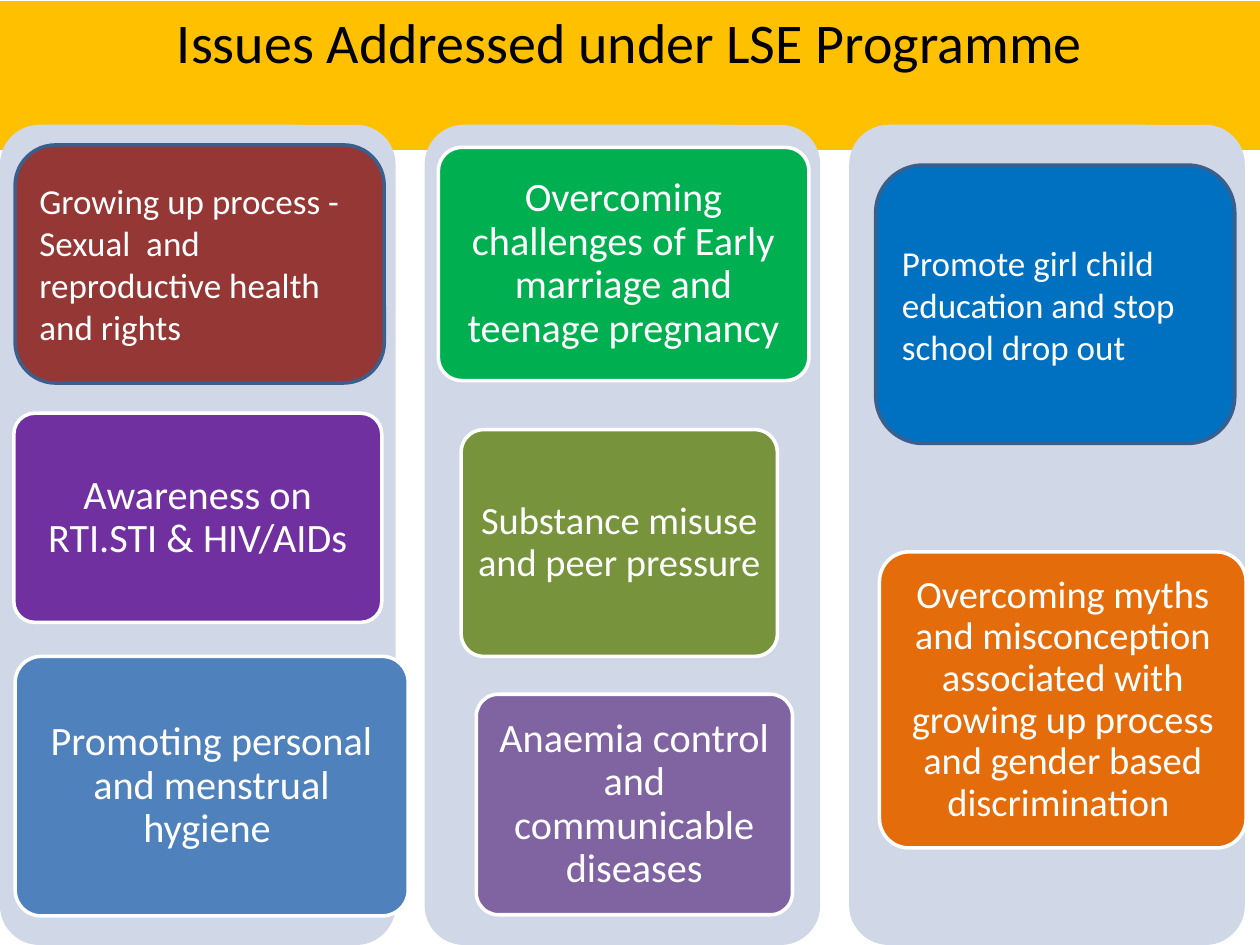
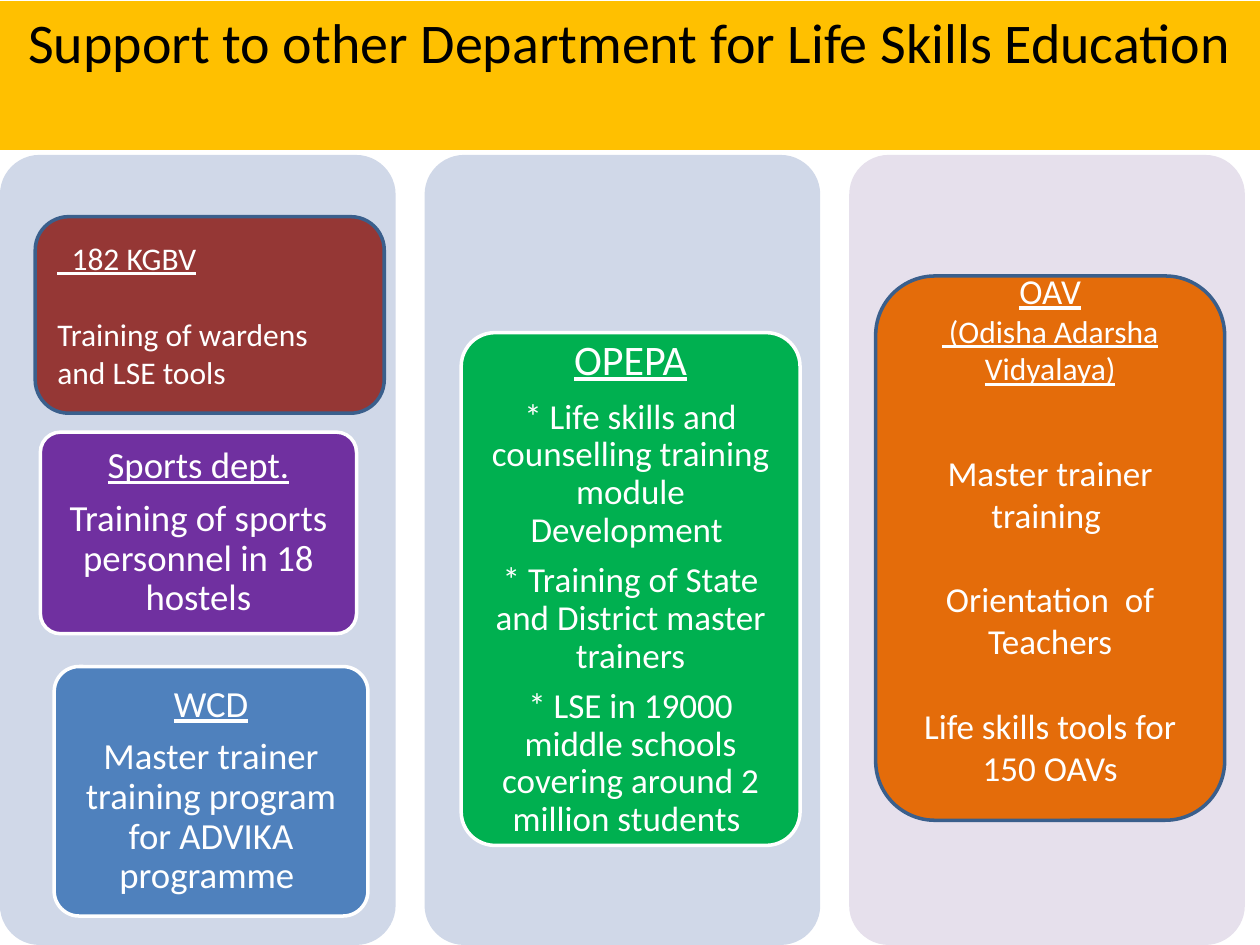
from pptx import Presentation
from pptx.dml.color import RGBColor
from pptx.enum.shapes import MSO_SHAPE
from pptx.enum.text import MSO_ANCHOR, MSO_AUTO_SIZE, PP_ALIGN
from pptx.util import Inches, Pt

# Shared look
FONT = "Calibri"
WHITE = RGBColor(0xFF, 0xFF, 0xFF)
BLACK = RGBColor(0x00, 0x00, 0x00)
GOLD = RGBColor(0xFF, 0xC0, 0x00)
PALE_BLUE = RGBColor(0xD0, 0xD8, 0xE8)
PALE_LILAC = RGBColor(0xE6, 0xE0, 0xEC)
BLUE = RGBColor(0x4F, 0x81, 0xBD)
BRIGHT_BLUE = RGBColor(0x00, 0x70, 0xC0)
PURPLE = RGBColor(0x70, 0x30, 0xA0)
LILAC = RGBColor(0x80, 0x64, 0xA2)
GREEN = RGBColor(0x00, 0xB0, 0x50)
OLIVE = RGBColor(0x77, 0x93, 0x3C)
ORANGE = RGBColor(0xE4, 0x6C, 0x0A)
MAROON = RGBColor(0x95, 0x37, 0x35)
EDGE = RGBColor(0x3A, 0x5F, 0x8C)

SLIDE_W, SLIDE_H = 10, 7.5
COLUMN_W, COLUMN_STEP = 3.14, 3.37


def add_text(tf, text, size=20, color=WHITE, align=PP_ALIGN.CENTER,
             underline=False, line=1.0, before=0, after=0):
    """Write one paragraph, filling the empty first one if there is one."""
    p = tf.paragraphs[0]
    if p.runs:
        p = tf.add_paragraph()
    p.alignment, p.line_spacing = align, line
    p.space_before, p.space_after = Pt(before), Pt(after)
    r = p.add_run()
    r.text = text
    r.font.name, r.font.size = FONT, Pt(size)
    r.font.color.rgb, r.font.underline = color, underline


def set_frame(tf, anchor, side, end):
    tf.word_wrap, tf.auto_size = True, MSO_AUTO_SIZE.NONE
    tf.vertical_anchor = anchor
    tf.margin_left = tf.margin_right = Inches(side)
    tf.margin_top = tf.margin_bottom = Inches(end)


def add_panel(s, x, y, w, h, fill, line=None, corner=0.1):
    sp = s.shapes.add_shape(MSO_SHAPE.ROUNDED_RECTANGLE,
                            Inches(x), Inches(y), Inches(w), Inches(h))
    sp.shadow.inherit = False
    sp.adjustments[0] = corner
    sp.fill.solid()
    sp.fill.fore_color.rgb = fill
    if line is None:
        sp.line.fill.background()
    else:
        sp.line.color.rgb, sp.line.width = line, Pt(2)
    return sp


def add_tile(s, box, fill, *items):
    """White-edged tile; each item is (text, size) or (text, size, underline)."""
    tf = add_panel(s, *box, fill, WHITE).text_frame
    set_frame(tf, MSO_ANCHOR.MIDDLE, 0.06, 0.05)
    for text, size, *underline in items:
        add_text(tf, text, size, underline=bool(underline),
                 line=0.9, after=0.35 * size)


def add_card(s, box, fill):
    """Dark-edged card with rounder corners; returns its text frame."""
    tf = add_panel(s, *box, fill, EDGE, corner=0.17).text_frame
    set_frame(tf, MSO_ANCHOR.MIDDLE, 0.1, 0.05)
    return tf


def add_column_slide(prs, title, top, column_fills):
    """Title band across the top and three full-height columns."""
    s = prs.slides.add_slide(prs.slide_layouts[5])
    band = s.shapes.title
    band.left, band.top = Inches(0), Inches(0.01)
    band.width, band.height = Inches(SLIDE_W), Inches(1.18)
    band.fill.solid()
    band.fill.fore_color.rgb = GOLD
    set_frame(band.text_frame, MSO_ANCHOR.TOP, 0.1, 0.05)
    add_text(band.text_frame, title, 32, BLACK)
    for i, fill in enumerate(column_fills):
        add_panel(s, i * COLUMN_STEP, top, COLUMN_W, SLIDE_H - top, fill)
    return s


def add_issues_slide(prs):
    s = add_column_slide(prs, "Issues Addressed under LSE Programme",
                         0.99, [PALE_BLUE] * 3)
    # Left column
    tf = add_card(s, (0.12, 1.15, 2.93, 1.89), MAROON)
    add_text(tf, "Growing up process - Sexual  and reproductive health and rights",
             align=PP_ALIGN.LEFT)
    add_tile(s, (0.11, 3.28, 2.92, 1.66), PURPLE,
             ("Awareness on RTI.STI & HIV/AIDs", 23))
    add_tile(s, (0.12, 5.21, 3.12, 2.06), BLUE,
             ("Promoting personal and menstrual hygiene ", 23))
    # Middle column
    add_tile(s, (3.48, 1.17, 2.94, 1.85), GREEN,
             ("Overcoming challenges of Early marriage and teenage pregnancy", 23))
    add_tile(s, (3.66, 3.41, 2.51, 1.8), OLIVE,
             ("Substance misuse and peer pressure", 22))
    add_tile(s, (3.78, 5.51, 2.51, 1.75), LILAC,
             ("Anaemia control and communicable diseases", 23))
    # Right column
    tf = add_card(s, (6.95, 1.31, 2.85, 2.21), BRIGHT_BLUE)
    add_text(tf, "Promote girl child education and stop school drop out",
             align=PP_ALIGN.LEFT)
    add_tile(s, (6.98, 4.38, 2.91, 2.35), ORANGE,
             ("Overcoming myths and misconception associated with growing up "
              "process and gender based discrimination ", 22))


def add_support_slide(prs):
    s = add_column_slide(prs, "Support to other Department for Life Skills Education",
                         1.23, [PALE_BLUE, PALE_BLUE, PALE_LILAC])
    # Left column
    tf = add_card(s, (0.28, 1.72, 2.77, 1.56), MAROON)
    add_text(tf, "  182 KGBV", 18, align=PP_ALIGN.LEFT, underline=True)
    add_text(tf, "Training of wardens and LSE tools", 18,
             align=PP_ALIGN.LEFT, before=22)
    add_tile(s, (0.32, 3.43, 2.51, 1.6), PURPLE,
             ("Sports dept.", 21, True),
             ("Training of sports personnel in 18 hostels", 21))
    add_tile(s, (0.43, 5.29, 2.49, 1.98), BLUE,
             ("WCD", 21, True),
             ("Master trainer training program for ADVIKA programme ", 21))
    # Middle column
    add_tile(s, (3.66, 2.64, 2.69, 4.07), GREEN,
             ("OPEPA", 24, True),
             ("* Life skills and counselling training module Development ", 20),
             ("* Training of State and District master trainers", 20),
             ("* LSE in 19000 middle schools covering around 2 million students ", 20))
    # Right column
    tf = add_card(s, (6.95, 2.19, 2.77, 4.32), ORANGE)
    tf.margin_bottom = Inches(0.35)
    add_text(tf, "OAV", underline=True)
    add_text(tf, " (Odisha Adarsha Vidyalaya)", 18, underline=True)
    add_text(tf, "Master trainer training ", before=36.5)
    for text in ("Orientation  of Teachers", "Life skills tools for 150 OAVs"):
        add_text(tf, text, before=24.5)


def main():
    prs = Presentation()
    prs.slide_width, prs.slide_height = Inches(SLIDE_W), Inches(SLIDE_H)
    add_issues_slide(prs)
    add_support_slide(prs)
    prs.save("out.pptx")


if __name__ == "__main__":
    main()
